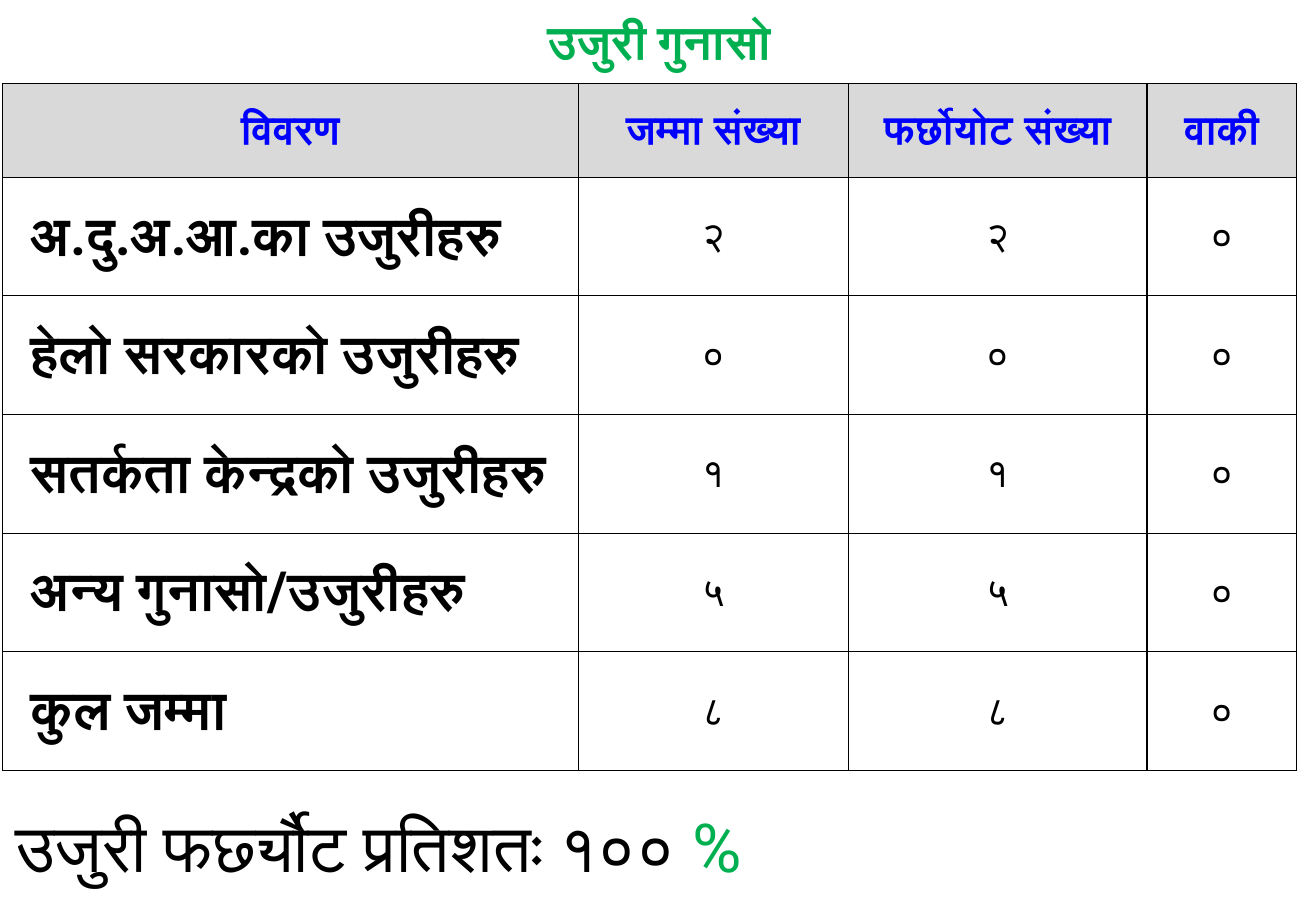
from lxml.etree import SubElement
from pptx import Presentation
from pptx.dml.color import RGBColor
from pptx.enum.text import MSO_ANCHOR, MSO_AUTO_SIZE, PP_ALIGN
from pptx.oxml.ns import qn
from pptx.util import Pt

GREEN, BLUE, BLACK, GREY = "00B050", "0000FF", "000000", "D9D9D9"

HEADINGS = ["विवरण", "जम्मा संख्या", "फर्छोयोट संख्या", "वाकी"]
COMPLAINTS = [
    ["अ.दु.अ.आ.का उजुरीहरु", "२", "२", "०"],
    ["हेलो सरकारको उजुरीहरु", "०", "०", "०"],
    ["सतर्कता केन्द्रको उजुरीहरु", "१", "१", "०"],
    ["अन्य गुनासो/उजुरीहरु", "५", "५", "०"],
    ["कुल जम्मा", "८", "८", "०"],
]
COLUMN_WIDTHS = [341.28, 159.84, 177.12, 88.56]
HEADING_HEIGHT, ROW_HEIGHT = 55.44, 70.3


def colour(value):
    return RGBColor.from_string(value)


def add_span(para, text, font="Arial", size=24, color=BLACK, bold=False):
    span = para.add_run()
    span.text = text
    span.font.name = font
    span.font.size = Pt(size)
    span.font.bold = bold
    span.font.color.rgb = colour(color)
    # Devanagari takes the complex-script typeface
    SubElement(span.font._element, qn("a:cs"), typeface=font)


def add_borders(cell, color=BLACK, width=0.75):
    properties = cell._tc.get_or_add_tcPr()
    for side in ("lnL", "lnR", "lnT", "lnB"):
        line = SubElement(properties, qn(f"a:{side}"), w=str(Pt(width)))
        fill = SubElement(line, qn("a:solidFill"))
        SubElement(fill, qn("a:srgbClr"), val=color)


def fill_cell(cell, text, fill=None, align=PP_ALIGN.CENTER, indent=0, **style):
    add_borders(cell)
    if fill:
        cell.fill.solid()
        cell.fill.fore_color.rgb = colour(fill)
    else:
        cell.fill.background()
    cell.vertical_anchor = MSO_ANCHOR.MIDDLE
    para = cell.text_frame.paragraphs[0]
    para.alignment = align
    if indent:
        para._p.get_or_add_pPr().set("marL", str(Pt(indent)))
    add_span(para, text, **style)


def set_title(page, text):
    title = page.shapes.title
    title.left, title.top = Pt(1.44), Pt(0)
    title.width, title.height = Pt(778.32), Pt(48.24)
    frame = title.text_frame
    frame.auto_size = MSO_AUTO_SIZE.NONE
    frame.vertical_anchor = MSO_ANCHOR.MIDDLE
    para = frame.paragraphs[0]
    para.alignment = PP_ALIGN.CENTER
    add_span(para, text, font="Calibri", size=28, color=GREEN, bold=True)


def add_complaint_table(page):
    heights = [HEADING_HEIGHT] + [ROW_HEIGHT] * len(COMPLAINTS)
    table = page.shapes.add_table(
        len(heights), len(COLUMN_WIDTHS), Pt(1.44), Pt(49.68),
        Pt(sum(COLUMN_WIDTHS)), Pt(sum(heights))).table
    table.first_row = table.horz_banding = False
    for column, width in zip(table.columns, COLUMN_WIDTHS):
        column.width = Pt(width)
    for row, height in zip(table.rows, heights):
        row.height = Pt(height)

    # Heading row
    for cell, heading in zip(table.rows[0].cells, HEADINGS):
        fill_cell(cell, heading, fill=GREY, color=BLUE, bold=True)

    # One row per kind of complaint
    for number, (label, *counts) in enumerate(COMPLAINTS, start=1):
        label_cell, *count_cells = table.rows[number].cells
        fill_cell(label_cell, label, align=PP_ALIGN.LEFT, indent=9.36,
                  font="Roboto", size=32, bold=True)
        for cell, count in zip(count_cells, counts):
            fill_cell(cell, count)


def add_settlement_rate(page):
    box = page.shapes.add_textbox(Pt(2.16), Pt(473.76), Pt(460.8), Pt(55.44))
    frame = box.text_frame
    frame.word_wrap = True
    frame.auto_size = MSO_AUTO_SIZE.SHAPE_TO_FIT_TEXT
    para = frame.paragraphs[0]
    add_span(para, "उजुरी फर्छ्यौट प्रतिशतः १०० ", font="Roboto", size=40)
    add_span(para, "%", font="Roboto", size=40, color=GREEN)


def main():
    deck = Presentation()
    deck.slide_width, deck.slide_height = Pt(779.76), Pt(540)
    page = deck.slides.add_slide(deck.slide_layouts.get_by_name("Title Only"))
    set_title(page, "उजुरी गुनासो")
    add_complaint_table(page)
    add_settlement_rate(page)
    deck.save("out.pptx")


if __name__ == "__main__":
    main()
